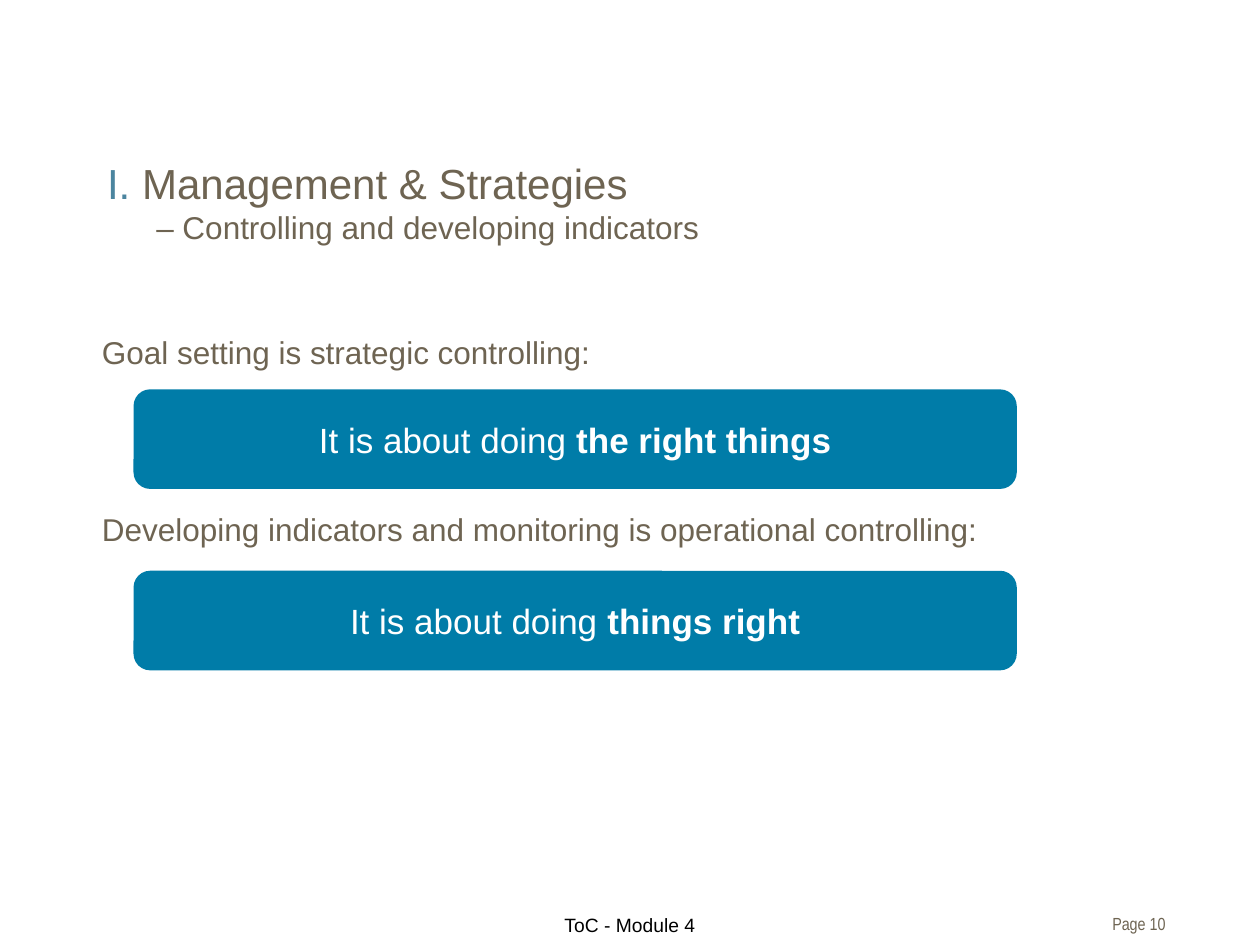
from lxml import etree
from pptx import Presentation
from pptx.dml.color import RGBColor
from pptx.enum import shapes, text
from pptx.oxml.ns import qn
from pptx.util import Inches, Pt

COLORS = {"brown": "6E6452", "steel": "4B859F", "blue": "007CA8",
          "white": "FFFFFF", "black": "000000"}
ALIGN = text.PP_ALIGN


def place(sp, left, top, width, height):
    box = {"left": left, "top": top, "width": width, "height": height}
    for name, value in box.items():
        setattr(sp, name, Inches(value))


def format_frame(tf, **insets):
    tf.word_wrap = True
    tf.auto_size = text.MSO_AUTO_SIZE.NONE
    tf.vertical_anchor = text.MSO_ANCHOR.TOP
    for side, value in insets.items():
        setattr(tf, f"margin_{side}", Inches(value))


def add_run(p, content, size, color, name="Arial", bold=False):
    r = p.add_run()
    r.text = content
    values = {"size": Pt(size), "name": name, "bold": bold}
    for key, value in values.items():
        setattr(r.font, key, value)
    r.font.color.rgb = RGBColor.from_string(COLORS[color])


def add_text(s, box):
    """Add a text box and return its frame."""
    tf = s.shapes.add_textbox(*map(Inches, box)).text_frame
    format_frame(tf)
    return tf


def add_title(s):
    sp = s.shapes.title
    place(sp, 0.75, 1.16, 8.5, 0.98)
    format_frame(sp.text_frame, left=0.1, top=0.09)
    p = sp.text_frame.paragraphs[0]
    p.alignment = ALIGN.LEFT
    pPr = p._p.get_or_add_pPr()
    pPr.set("marL", str(Inches(0.39)))
    pPr.set("indent", str(-Inches(0.39)))
    add_run(p, "I. ", 24, "steel")
    add_run(p, "Management & Strategies", 24, "brown")
    p.add_line_break()
    etree.SubElement(p._p[-1], qn("a:rPr"), sz="2400")
    add_run(p, "– Controlling and developing indicators", 18, "brown")


def add_statements(s, statements):
    tf = add_text(s, (0.71, 2.57, 8.78, 4.25))
    tf.margin_top = Inches(0.07)
    for i, statement in enumerate(statements):
        p = tf.add_paragraph() if i else tf.paragraphs[0]
        if i:
            p.space_before = Pt(80)
        add_run(p, statement, 18, "brown")


def add_banner(s, top, emphasis):
    sp = s.shapes.add_shape(shapes.MSO_SHAPE.ROUNDED_RECTANGLE,
                            *map(Inches, (1.06, top, 7.01, 0.79)))
    sp.shadow.inherit = False
    sp.fill.solid()
    sp.fill.fore_color.rgb = RGBColor.from_string(COLORS["blue"])
    sp.line.fill.background()
    tf = sp.text_frame
    tf.vertical_anchor = text.MSO_ANCHOR.MIDDLE
    p = tf.paragraphs[0]
    p.alignment = ALIGN.CENTER
    add_run(p, "It is about doing ", 20, "white")
    add_run(p, emphasis, 20, "white", bold=True)


def add_footer(s):
    p = add_text(s, (3.13, 7.2, 3.74, 0.27)).paragraphs[0]
    p.alignment = ALIGN.CENTER
    add_run(p, "ToC - Module 4", 11, "black")
    tf = add_text(s, (8.24, 7.2, 1.01, 0.27))
    tf.margin_right = 0
    p = tf.paragraphs[0]
    p.alignment = ALIGN.RIGHT
    add_run(p, "Page 10", 10, "brown", name="Arial Narrow")


def main():
    prs = Presentation()
    prs.slide_width, prs.slide_height = Inches(10), Inches(7.5)
    s = prs.slides.add_slide(prs.slide_layouts[5])
    add_title(s)
    add_statements(s, [
        "Goal setting is strategic controlling:",
        "Developing indicators and monitoring is operational controlling:",
    ])
    add_banner(s, 3.09, "the right things")
    add_banner(s, 4.53, "things right")
    add_footer(s)
    prs.save("out.pptx")


if __name__ == "__main__":
    main()
